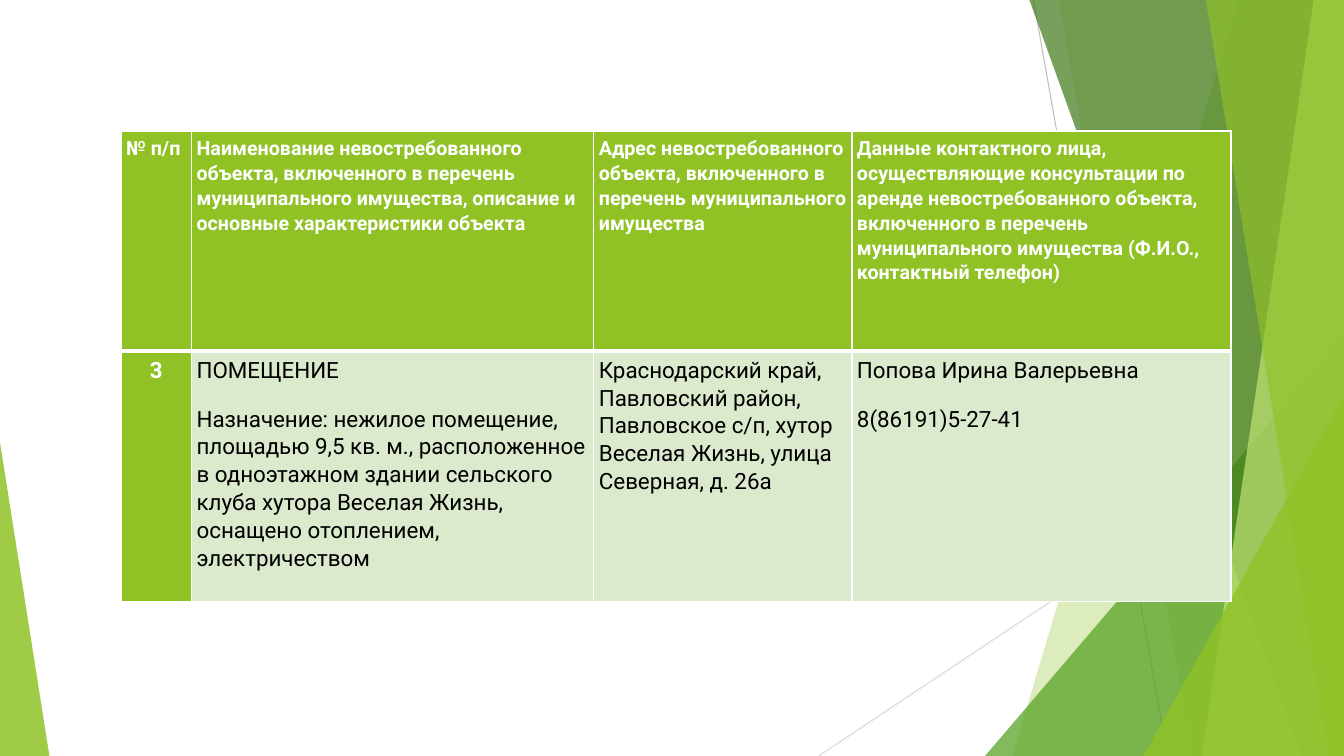
from lxml import etree
from pptx import Presentation
from pptx.dml.color import RGBColor
from pptx.enum.shapes import MSO_CONNECTOR, MSO_SHAPE
from pptx.enum.text import PP_ALIGN
from pptx.oxml import parse_xml
from pptx.oxml.ns import nsdecls, qn
from pptx.util import Inches, Pt

STRAIGHT = MSO_CONNECTOR.STRAIGHT
TRIANGLE = MSO_SHAPE.ISOSCELES_TRIANGLE
CENTER = PP_ALIGN.CENTER

LIME = RGBColor(0x90, 0xC2, 0x26)
GREEN = RGBColor(0x54, 0xA0, 0x21)
DARK_GREEN = RGBColor(0x3F, 0x78, 0x19)
LIGHT_LIME = RGBColor(0xC0, 0xE4, 0x74)
PALE_GREEN = RGBColor(0xDB, 0xE9, 0xCD)
GRAY = RGBColor(0xBF, 0xBF, 0xBF)
LIGHT_GRAY = RGBColor(0xD9, 0xD9, 0xD9)
WHITE = RGBColor(0xFF, 0xFF, 0xFF)
BLACK = RGBColor(0, 0, 0)

WIDTH, HEIGHT = 13.33, 7.5
FONT = "Roboto"


def paint(shape, color, opacity):
    """Fill a shape with a translucent colour, without outline or shadow."""
    shape.shadow.inherit = False
    shape.line.fill.background()
    shape.fill.solid()
    shape.fill.fore_color.rgb = color
    color_element = shape.fill._xPr.find(qn("a:solidFill"))[0]
    etree.SubElement(color_element, qn("a:alpha"), val=str(opacity * 1000))


def set_borders(cell, top, bottom):
    """Draw white cell borders; top and bottom widths are in points."""
    properties = cell._tc.get_or_add_tcPr()
    sides = (("lnL", 1), ("lnR", 1), ("lnT", top), ("lnB", bottom))
    for position, (side, width) in enumerate(sides):
        properties.insert(position, parse_xml(
            f'<a:{side} {nsdecls("a")} w="{Pt(width)}"><a:solidFill>'
            f'<a:srgbClr val="{WHITE}"/></a:solidFill></a:{side}>'))


presentation = Presentation()
presentation.slide_width = Inches(WIDTH)
presentation.slide_height = Inches(HEIGHT)
slide = presentation.slides.add_slide(presentation.slide_layouts[6])

# Thin background lines
for start_x, start_y, end_x, color in ((10.25, 0, 11.58, GRAY),
                                       (WIDTH, 4.03, 8.12, LIGHT_GRAY)):
    line = slide.shapes.add_connector(STRAIGHT, Inches(start_x), Inches(start_y),
                                      Inches(end_x), Inches(HEIGHT))
    line.line.color.rgb = color
    line.line.width = Pt(0.75)
    etree.SubElement(line._element.spPr, qn("a:effectLst"))

# Facets from back to front.
# Band: x of its left edge at the top and at the bottom; it runs to the right edge.
# Triangle: left, top, width, apex position; it stands on the bottom edge.
facets = (
    ("band", (12.28, 10.04), LIME, 30),
    ("band", (10.5, 11.83), LIME, 20),
    ("triangle", (9.77, 3.33, 3.56, 1), GREEN, 72),
    ("band", (10.21, 12.91), DARK_GREEN, 70),
    ("band", (13.03, 11.92), LIGHT_LIME, 70),
    ("band", (11.96, 13.18), LIME, 65),
    ("triangle", (11.34, 3.93, 1.99, 1), LIME, 80),
    ("triangle", (0, 4.39, 0.49, 0), LIME, 85),
)
for kind, geometry, color, opacity in facets:
    if kind == "band":
        top_x, bottom_x = geometry
        builder = slide.shapes.build_freeform(Inches(top_x), 0)
        corners = ((WIDTH, 0), (WIDTH, HEIGHT), (bottom_x, HEIGHT))
        builder.add_line_segments([(Inches(x), Inches(y)) for x, y in corners])
        facet = builder.convert_to_shape()
    else:
        left, top, width, apex = geometry
        facet = slide.shapes.add_shape(TRIANGLE, Inches(left), Inches(top),
                                       Inches(width), Inches(HEIGHT - top))
        facet.adjustments[0] = apex
    paint(facet, color, opacity)

# Property table
rows = (
    ("№ п/п",
     "Наименование невостребованного объекта, включенного в перечень "
     "муниципального имущества, описание и основные характеристики объекта",
     "Адрес невостребованного объекта, включенного в перечень "
     "муниципального имущества",
     "Данные контактного лица, осуществляющие консультации по аренде "
     "невостребованного объекта, включенного в перечень муниципального "
     "имущества (Ф.И.О., контактный телефон)"),
    ("3",
     "ПОМЕЩЕНИЕ\nНазначение: нежилое помещение, площадью 9,5 кв. м., "
     "расположенное в одноэтажном здании сельского клуба хутора Веселая Жизнь, "
     "оснащено отоплением, электричеством",
     "Краснодарский край, Павловский район, Павловское с/п, хутор "
     "Веселая Жизнь, улица Северная, д. 26а",
     "Попова Ирина Валерьевна\n8(86191)5-27-41"),
)
column_widths = (0.7, 3.99, 2.56, 3.76)
row_heights = (2.18, 2.49)
table = slide.shapes.add_table(
    len(rows), len(column_widths), Inches(1.2), Inches(1.3),
    Inches(sum(column_widths)), Inches(sum(row_heights))).table
table.first_col = True
for column, width in zip(table.columns, column_widths):
    column.width = Inches(width)
for row, height in zip(table.rows, row_heights):
    row.height = Inches(height)

for row_index, texts in enumerate(rows):
    is_header = row_index == 0
    for column_index, text in enumerate(texts):
        is_heading = is_header or column_index == 0
        cell = table.cell(row_index, column_index)
        cell.margin_left = cell.margin_right = Inches(0.05)
        cell.margin_top = cell.margin_bottom = Inches(0.05)
        cell.fill.solid()
        cell.fill.fore_color.rgb = LIME if is_heading else PALE_GREEN
        set_borders(cell, top=1 if is_header else 3, bottom=3 if is_header else 1)
        cell.text_frame.text = text
        for paragraph_index, paragraph in enumerate(cell.text_frame.paragraphs):
            paragraph.line_spacing = 1.07
            paragraph.space_before = Pt(7.5 if paragraph_index else 0)
            paragraph.space_after = Pt(7.5)
            if is_heading and not is_header:
                paragraph.alignment = CENTER
            for run in paragraph.runs:
                run.font.name = FONT
                run.font.size = Pt(14 if is_header else 16)
                run.font.bold = is_heading
                run.font.color.rgb = WHITE if is_heading else BLACK

presentation.save("out.pptx")
